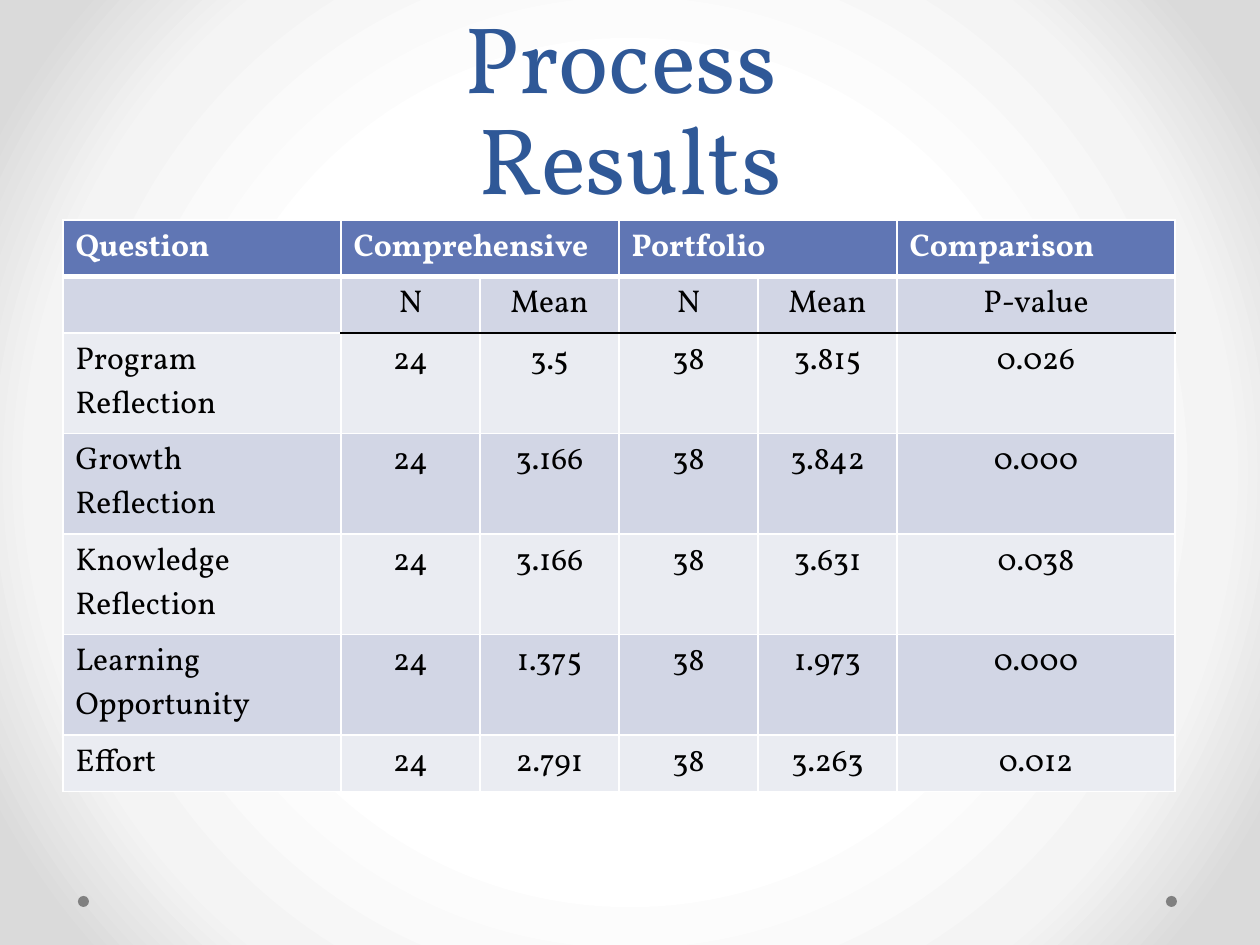
"""Build the slide that tabulates process results."""
from dataclasses import dataclass

from lxml import etree
from pptx import Presentation
from pptx import util as u
from pptx.dml.color import RGBColor
from pptx.enum import shapes, text
from pptx.oxml import ns, parse_xml

SCALE = 914400 / 126
FONT = "Vollkorn"
COLORS = {
    "title": "2F5897", "header": "6076B4", "dark_band": "D2D6E5",
    "light_band": "EAECF2", "white": "FFFFFF", "black": "000000", "dot": "808080",
}
BACKGROUND_STOPS = ((50, "FFFFFF"), (76, "F4F4F4"), (92, "DADADA"))
COLUMN_WIDTHS = (278, 139, 139, 139, 139, 278)
ROW_HEIGHT = 52
MERGED_COLUMNS = ((1, 2), (3, 4))
ROWS = (
    ("Question", "Comprehensive", "", "Portfolio", "", "Comparison"),
    ("", "N", "Mean", "N", "Mean", "P-value"),
    ("Program Reflection", "24", "3.5", "38", "3.815", "0.026"),
    ("Growth Reflection", "24", "3.166", "38", "3.842", "0.000"),
    ("Knowledge Reflection", "24", "3.166", "38", "3.631", "0.038"),
    ("Learning Opportunity", "24", "1.375", "38", "1.973", "0.000"),
    ("Effort", "24", "2.791", "38", "3.263", "0.012"),
)


@dataclass(frozen=True)
class Box:
    left: int
    top: int
    width: int
    height: int

    def emu(self) -> tuple:
        return tuple(px(n) for n in (self.left, self.top, self.width, self.height))


@dataclass(frozen=True)
class Border:
    side: str
    color: str = "white"
    points: int = 1


TITLE = Box(63, 0, 1134, 220)
TABLE = Box(63, 220, sum(COLUMN_WIDTHS), ROW_HEIGHT * len(ROWS))
DOTS = (Box(78, 896, 11, 11), Box(1166, 896, 11, 11))


def px(length: int) -> int:
    return round(length * SCALE)


def rgb(name: str) -> RGBColor:
    return RGBColor.from_string(COLORS[name])


def add_run(paragraph, words: str, size: int, color: str, bold: bool = False) -> None:
    run = paragraph.add_run()
    run.text = words
    run.font.name = FONT
    run.font.size = u.Pt(size)
    run.font.bold = bold
    run.font.color.rgb = rgb(color)


def set_background(slide) -> None:
    fill = slide.background.fill
    fill.gradient()
    old = slide.background._cSld.find(".//" + ns.qn("a:gradFill"))
    stops = "".join(
        f'<a:gs pos="{position * 1000}"><a:srgbClr val="{color}"/></a:gs>'
        for position, color in BACKGROUND_STOPS
    )
    old.getparent().replace(old, parse_xml(
        f'<a:gradFill {ns.nsdecls("a")} rotWithShape="1"><a:gsLst>{stops}</a:gsLst>'
        '<a:path path="circle"><a:fillToRect l="50000" t="50000" r="50000" b="50000"/>'
        "</a:path></a:gradFill>"
    ))


def draw_dot(slide, box: Box) -> None:
    dot = slide.shapes.add_shape(shapes.MSO_SHAPE.OVAL, *box.emu())
    dot.shadow.inherit = False
    dot.fill.solid()
    dot.fill.fore_color.rgb = rgb("dot")
    dot.line.fill.background()


def draw_title(slide) -> None:
    title = slide.shapes.title
    title.left, title.top, title.width, title.height = TITLE.emu()
    frame = title.text_frame
    frame.auto_size = text.MSO_AUTO_SIZE.NONE
    frame.word_wrap = True
    frame.vertical_anchor = text.MSO_ANCHOR.BOTTOM
    paragraph = frame.paragraphs[0]
    paragraph.alignment = text.PP_ALIGN.CENTER
    paragraph.line_spacing = u.Pt(58)
    add_run(paragraph, "Process ", 54, "title")
    paragraph.add_line_break()
    add_run(paragraph, "Results", 54, "title")


def add_border(cell, border: Border) -> None:
    properties = cell._tc.get_or_add_tcPr()
    line = etree.SubElement(properties, ns.qn(f"a:ln{border.side}"), w=str(u.Pt(border.points)))
    fill = etree.SubElement(line, ns.qn("a:solidFill"))
    etree.SubElement(fill, ns.qn("a:srgbClr"), val=COLORS[border.color])


def cell_borders(row: int, column: int) -> tuple:
    below_labels = row == 2 and column > 0
    under_labels = row == 1 and column > 0
    return (
        Border("L"),
        Border("R"),
        Border("T", "black" if below_labels else "white", 3 if row == 1 else 1),
        Border("B", "black" if under_labels else "white", 3 if row == 0 else 1),
    )


def format_cell(cell, row: int, column: int, words: str) -> None:
    for border in cell_borders(row, column):
        add_border(cell, border)
    band = "header" if row == 0 else "dark_band" if row % 2 else "light_band"
    cell.fill.solid()
    cell.fill.fore_color.rgb = rgb(band)
    paragraph = cell.text_frame.paragraphs[0]
    centered = row > 0 and column > 0
    paragraph.alignment = text.PP_ALIGN.CENTER if centered else text.PP_ALIGN.LEFT
    if words:
        add_run(paragraph, words, 18, "black" if row else "white", bold=row == 0)


def draw_table(slide) -> None:
    table = slide.shapes.add_table(len(ROWS), len(COLUMN_WIDTHS), *TABLE.emu()).table
    for column, width in zip(table.columns, COLUMN_WIDTHS):
        column.width = px(width)
    for row, values in enumerate(ROWS):
        table.rows[row].height = px(ROW_HEIGHT)
        for column, words in enumerate(values):
            format_cell(table.cell(row, column), row, column, words)
    for first, last in MERGED_COLUMNS:
        table.cell(0, first).merge(table.cell(0, last))


def main() -> None:
    presentation = Presentation()
    presentation.slide_width, presentation.slide_height = px(1260), px(945)
    slide = presentation.slides.add_slide(presentation.slide_layouts[5])
    set_background(slide)
    for box in DOTS:
        draw_dot(slide, box)
    draw_title(slide)
    draw_table(slide)
    presentation.save("out.pptx")


if __name__ == "__main__":
    main()
